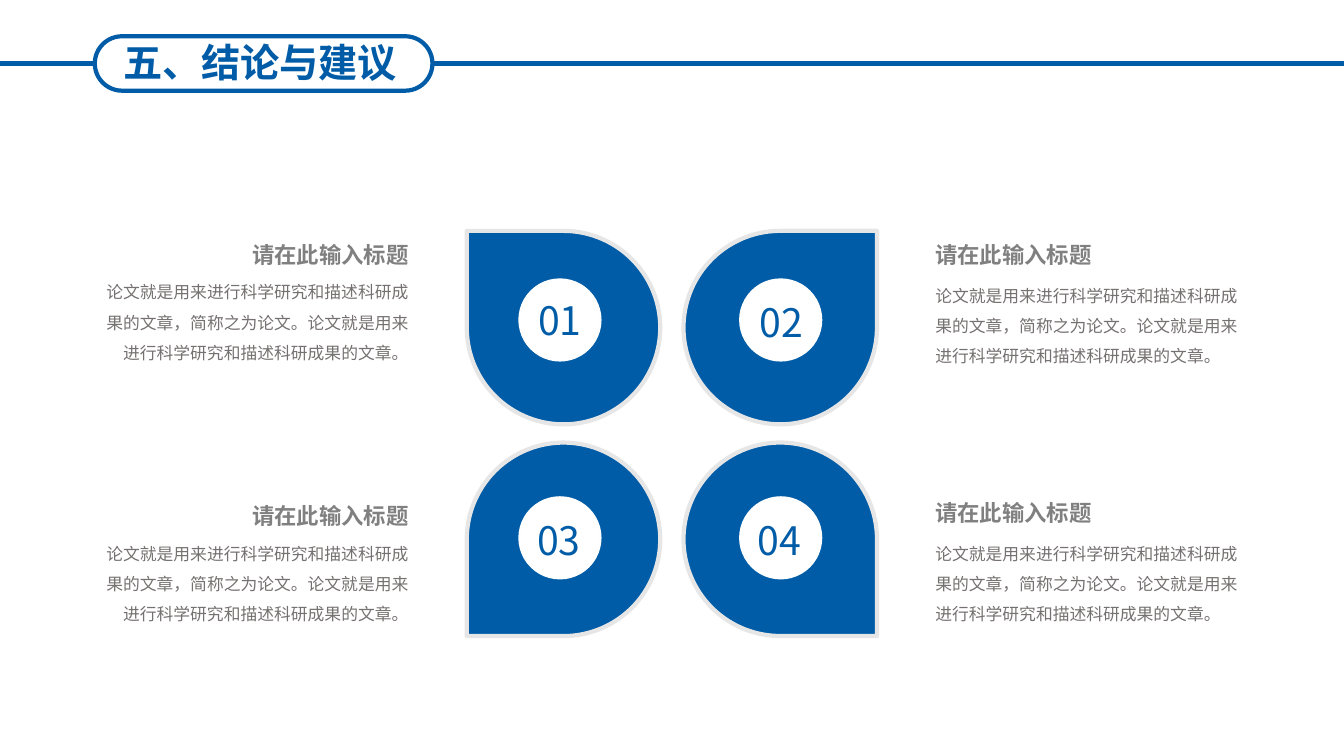
from lxml import etree
from pptx import Presentation
from pptx.dml.color import RGBColor
from pptx.enum.shapes import MSO_CONNECTOR, MSO_SHAPE
from pptx.enum.text import PP_ALIGN
from pptx.oxml.ns import qn
from pptx.util import Pt

LEFT, CENTER, RIGHT = PP_ALIGN.LEFT, PP_ALIGN.CENTER, PP_ALIGN.RIGHT
TEARDROP, OVAL, PILL = MSO_SHAPE.TEAR, MSO_SHAPE.OVAL, MSO_SHAPE.ROUNDED_RECTANGLE
STRAIGHT = MSO_CONNECTOR.STRAIGHT
FONT = "Noto Sans CJK SC"
COLORS = {"blue": "005CA7", "rim": "E7E6E6", "white": "FFFFFF", "ring": "FEFEFE",
          "heading": "808080", "body": "767171"}
SLIDE_W, SLIDE_H = 960, 540
HEADING = "请在此输入标题"
BODY = "论文就是用来进行科学研究和描述科研成果的文章，简称之为论文。论文就是用来进行科学研究和描述科研成果的文章。"


def rgb(name):
    """Return the palette colour called name."""
    return RGBColor.from_string(COLORS[name])


def add_text(s, text, x, y, w, h, size=12, color="body", bold=False,
             align=LEFT, spacing=None, wrap=True):
    """Add a one-paragraph text box."""
    tf = s.shapes.add_textbox(Pt(x), Pt(y), Pt(w), Pt(h)).text_frame
    tf.word_wrap = wrap
    p = tf.paragraphs[0]
    p.alignment = align
    if spacing:
        p.line_spacing = spacing
    r = p.add_run()
    r.text = text
    r.font.size, r.font.bold, r.font.name = Pt(size), bold, FONT
    r.font.color.rgb = rgb(color)
    etree.SubElement(r.font._element, qn("a:ea")).set("typeface", FONT)


def add_shape(s, kind, x, y, w, h, line, weight, fill=None):
    """Add a flat preset shape, hollow when no fill is named."""
    sp = s.shapes.add_shape(kind, Pt(x), Pt(y), Pt(w), Pt(h))
    sp.shadow.inherit = False
    if fill:
        sp.fill.solid()
        sp.fill.fore_color.rgb = rgb(fill)
    else:
        sp.fill.background()
    sp.line.color.rgb = rgb(line)
    sp.line.width = Pt(weight)
    return sp


def add_rule(s, x1, x2, y):
    """Add a horizontal blue rule."""
    rule = s.shapes.add_connector(STRAIGHT, Pt(x1), Pt(y), Pt(x2), Pt(y))
    rule.line.color.rgb = rgb("blue")
    rule.line.width = Pt(3)
    etree.SubElement(rule._element.spPr, qn("a:effectLst"))


def add_header(s, title, x, y, w, h):
    """Draw the title pill with a rule running to each slide edge."""
    middle = y + h / 2
    add_rule(s, x + w, SLIDE_W, middle)
    add_rule(s, 0, x, middle)
    pill = add_shape(s, PILL, x, y, w, h, "blue", 3)
    pill.adjustments[0] = 0.5
    add_text(s, title, x - 3.6, y - 2.1, w + 2.2, 41, size=28, color="blue",
             bold=True, align=CENTER)


def add_petal(s, number, x, y, size, rotation, disc, label):
    """Draw a teardrop, its white disc and its number, offset from its corner."""
    petal = add_shape(s, TEARDROP, x, y, size, size, "rim", 3, "blue")
    petal.rotation = rotation
    add_shape(s, OVAL, x + disc[0], y + disc[1], 58.3, 58.3, "ring", 1.13, "white")
    add_text(s, number, x + label[0], y + label[1], 48, 41, size=28,
             color="blue", wrap=False)


def add_note(s, x, y, w, align, body_gap):
    """Write a heading with its paragraph below."""
    add_text(s, HEADING, x, y, w, 26.6, size=16, color="heading", bold=True, align=align)
    add_text(s, BODY, x, y + body_gap, w, 72.7, align=align, spacing=1.5)


def main():
    """Build and save the slide."""
    prs = Presentation()
    prs.slide_width, prs.slide_height = Pt(SLIDE_W), Pt(SLIDE_H)
    s = prs.slides.add_slide(prs.slide_layouts[6])
    add_header(s, "五、结论与建议", 67.7, 25.9, 241.2, 38.9)

    columns = [(333.4, 37.4, 59, RIGHT), (488.2, 40.3, 661, LEFT)]
    rows = [(164.9, 34.5), (316.1, 38.9)]
    rotations = [270, 0, 180, 90]
    labels = [(43.9, 43.2), (47.5, 44.6), (43.2, 49), (46, 49)]
    notes = [(168.5, 22.3), (168.5, 24.5), (355, 22.3), (352.8, 24.5)]
    for i in range(4):
        petal_x, disc_x, note_x, align = columns[i % 2]
        petal_y, disc_y = rows[i // 2]
        note_y, body_gap = notes[i]
        add_petal(s, f"{i + 1:02}", petal_x, petal_y, 138.2, rotations[i],
                  (disc_x, disc_y), labels[i])
        add_note(s, note_x, note_y, 240, align, body_gap)

    prs.save("out.pptx")


if __name__ == "__main__":
    main()
